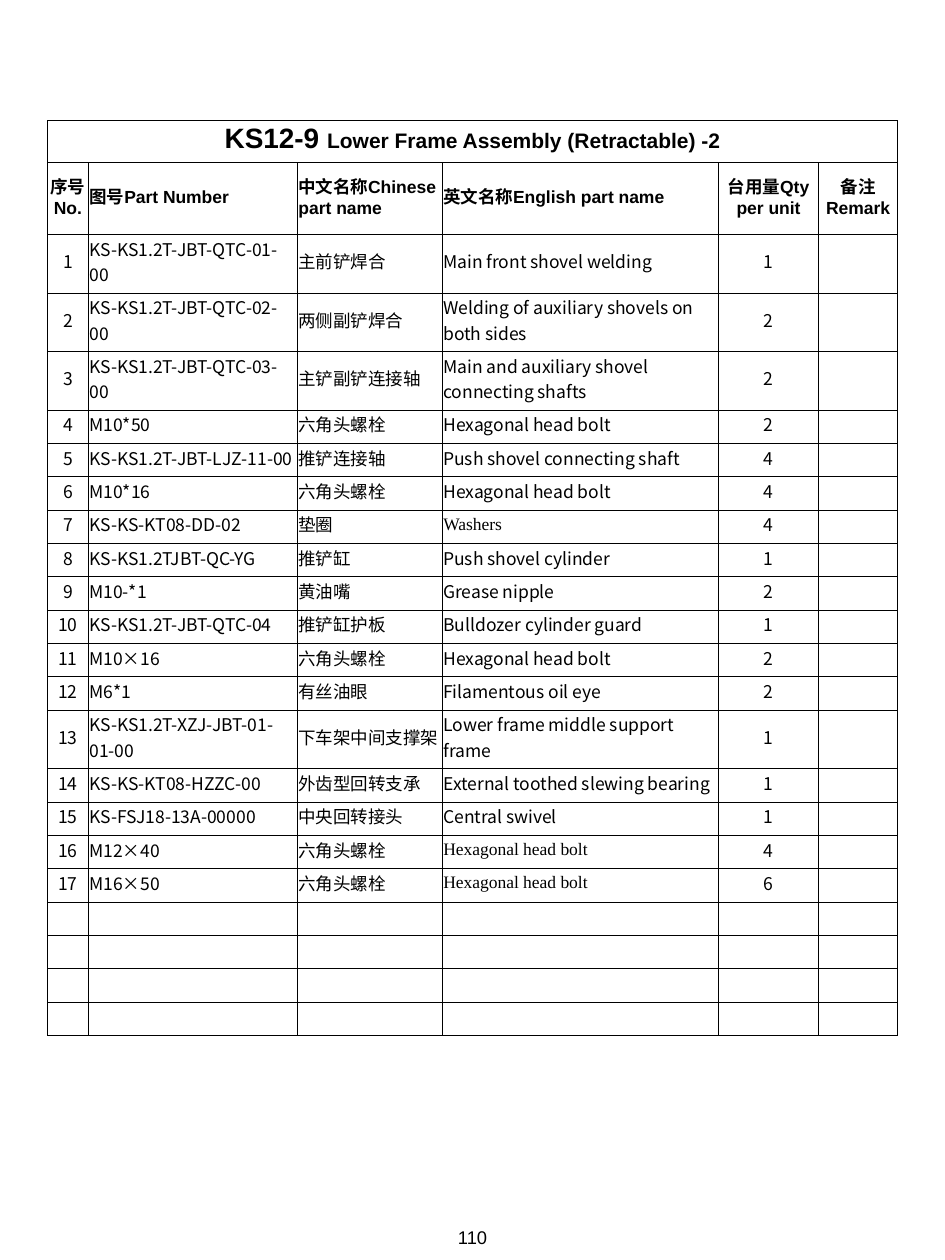
"""Builds a parts list page for the lower frame assembly."""
from lxml.etree import SubElement
from pptx import Presentation
from pptx.dml.color import RGBColor
from pptx.enum.text import MSO_ANCHOR, PP_ALIGN
from pptx.oxml import parse_xml
from pptx.oxml.ns import nsdecls, qn
from pptx.util import Pt

COLORS = {"text": "000000", "border": "000000", "cell": "FFFFFF"}
SANS, CJK, SERIF = "Arial", "Noto Sans CJK SC", "Times New Roman"

TITLE = [("KS12-9 ", 16), ("Lower Frame Assembly (Retractable) -2", 12)]
HEADERS = ["序号No.", "图号Part Number", "中文名称Chinese part name",
           "英文名称English part name", "台用量Qty per unit", "备注Remark"]
PARTS = [
    ("KS-KS1.2T-JBT-QTC-01-00", "主前铲焊合", "Main front shovel welding", 1),
    ("KS-KS1.2T-JBT-QTC-02-00", "两侧副铲焊合", "Welding of auxiliary shovels on both sides", 2),
    ("KS-KS1.2T-JBT-QTC-03-00", "主铲副铲连接轴", "Main and auxiliary shovel connecting shafts", 2),
    ("M10*50", "六角头螺栓", "Hexagonal head bolt", 2),
    ("KS-KS1.2T-JBT-LJZ-11-00", "推铲连接轴", "Push shovel connecting shaft", 4),
    ("M10*16", "六角头螺栓", "Hexagonal head bolt", 4),
    ("KS-KS-KT08-DD-02", "垫圈", "Washers", 4),
    ("KS-KS1.2TJBT-QC-YG", "推铲缸", "Push shovel cylinder", 1),
    ("M10-*1", "黄油嘴", "Grease nipple", 2),
    ("KS-KS1.2T-JBT-QTC-04", "推铲缸护板", "Bulldozer cylinder guard", 1),
    ("M10×16", "六角头螺栓", "Hexagonal head bolt", 2),
    ("M6*1", "有丝油眼", "Filamentous oil eye", 2),
    ("KS-KS1.2T-XZJ-JBT-01-01-00", "下车架中间支撑架", "Lower frame middle support frame", 1),
    ("KS-KS-KT08-HZZC-00", "外齿型回转支承", "External toothed slewing bearing", 1),
    ("KS-FSJ18-13A-00000", "中央回转接头", "Central swivel", 1),
    ("M12×40", "六角头螺栓", "Hexagonal head bolt", 4),
    ("M16×50", "六角头螺栓", "Hexagonal head bolt", 6),
]
PAGE_NUMBER = "110"

SPARE_ROWS = 4
TWO_LINE_PARTS = {1, 2, 3, 13}
SERIF_PARTS = {7, 16, 17}
COLUMN_WIDTHS = [23.2, 119.5, 82.8, 158, 57, 45.4]
CENTERED_COLUMNS = {0, 4, 5}
TITLE_HEIGHT, HEADER_HEIGHT, SINGLE_HEIGHT, DOUBLE_HEIGHT = 24, 41.1, 19.05, 33.45
TABLE_LEFT, TABLE_TOP = 27.2, 69
BODY_SIZE = 10


def add_text(paragraph, text, size, font, bold=False):
    run = paragraph.add_run()
    run.text = text
    run.font.size = Pt(size)
    run.font.bold = bold
    run.font.name = font
    run.font.color.rgb = RGBColor.from_string(COLORS["text"])
    SubElement(run.font._element, qn("a:ea")).set("typeface", CJK)


def set_borders(cell):
    properties = cell._tc.get_or_add_tcPr()
    for index, side in enumerate(("lnL", "lnR", "lnT", "lnB")):
        line = parse_xml(
            f'<a:{side} {nsdecls("a")} w="{Pt(0.5)}"><a:solidFill>'
            f'<a:srgbClr val="{COLORS["border"]}"/></a:solidFill></a:{side}>')
        properties.insert(index, line)


def format_cell(cell, centered, filled):
    cell.margin_left = cell.margin_right = cell.margin_top = Pt(0.7)
    cell.margin_bottom = Pt(3.6)
    cell.vertical_anchor = MSO_ANCHOR.MIDDLE
    if filled:
        cell.fill.solid()
        cell.fill.fore_color.rgb = RGBColor.from_string(COLORS["cell"])
    else:
        cell.fill.background()
    set_borders(cell)
    paragraph = cell.text_frame.paragraphs[0]
    paragraph.alignment = PP_ALIGN.CENTER if centered else PP_ALIGN.LEFT
    return paragraph


def is_filled(number, column):
    if not 1 <= number <= len(PARTS):
        return False
    return column == 0 or (column in (2, 3) and number <= 4) or (number, column) == (15, 2)


def add_parts_table(slide):
    part_heights = [DOUBLE_HEIGHT if number in TWO_LINE_PARTS else SINGLE_HEIGHT
                    for number in range(1, len(PARTS) + SPARE_ROWS + 1)]
    heights = [TITLE_HEIGHT, HEADER_HEIGHT] + part_heights
    frame = slide.shapes.add_table(
        len(heights), len(COLUMN_WIDTHS), Pt(TABLE_LEFT), Pt(TABLE_TOP),
        Pt(sum(COLUMN_WIDTHS)), Pt(sum(heights)))
    table = frame.table
    table.first_row = table.horz_banding = False
    for column, width in zip(table.columns, COLUMN_WIDTHS):
        column.width = Pt(width)
    for row, height in zip(table.rows, heights):
        row.height = Pt(height)
    table.cell(0, 0).merge(table.cell(0, len(COLUMN_WIDTHS) - 1))

    rows = [[], HEADERS]
    rows += [(str(number), code, chinese, english, str(quantity), "")
             for number, (code, chinese, english, quantity) in enumerate(PARTS, 1)]
    rows += [[]] * SPARE_ROWS
    for row_index, texts in enumerate(rows):
        number = row_index - 1
        body_fonts = [CJK, CJK, SANS, SERIF if number in SERIF_PARTS else CJK, CJK, CJK]
        for column in range(len(COLUMN_WIDTHS)):
            paragraph = format_cell(table.cell(row_index, column),
                                    row_index == 0 or column in CENTERED_COLUMNS,
                                    is_filled(number, column))
            text = texts[column] if texts else ""
            if text:
                header = number == 0
                add_text(paragraph, text, BODY_SIZE, SANS if header else body_fonts[column], header)
            elif row_index or column:
                SubElement(paragraph._p, qn("a:endParaRPr")).set("sz", str(BODY_SIZE * 100))
    for text, size in TITLE:
        add_text(table.cell(0, 0).text_frame.paragraphs[0], text, size, SANS, True)


def add_page_number(slide):
    box = slide.shapes.add_textbox(Pt(184.3), Pt(697), Pt(171.4), Pt(20.2))
    box.text_frame.word_wrap = True
    box.text_frame.vertical_anchor = MSO_ANCHOR.MIDDLE
    paragraph = box.text_frame.paragraphs[0]
    paragraph.alignment = PP_ALIGN.CENTER
    add_text(paragraph, PAGE_NUMBER, 10.5, SANS)


def main():
    presentation = Presentation()
    presentation.slide_width, presentation.slide_height = Pt(540), Pt(720)
    slide = presentation.slides.add_slide(presentation.slide_layouts[6])
    add_parts_table(slide)
    add_page_number(slide)
    presentation.save("out.pptx")


if __name__ == "__main__":
    main()
